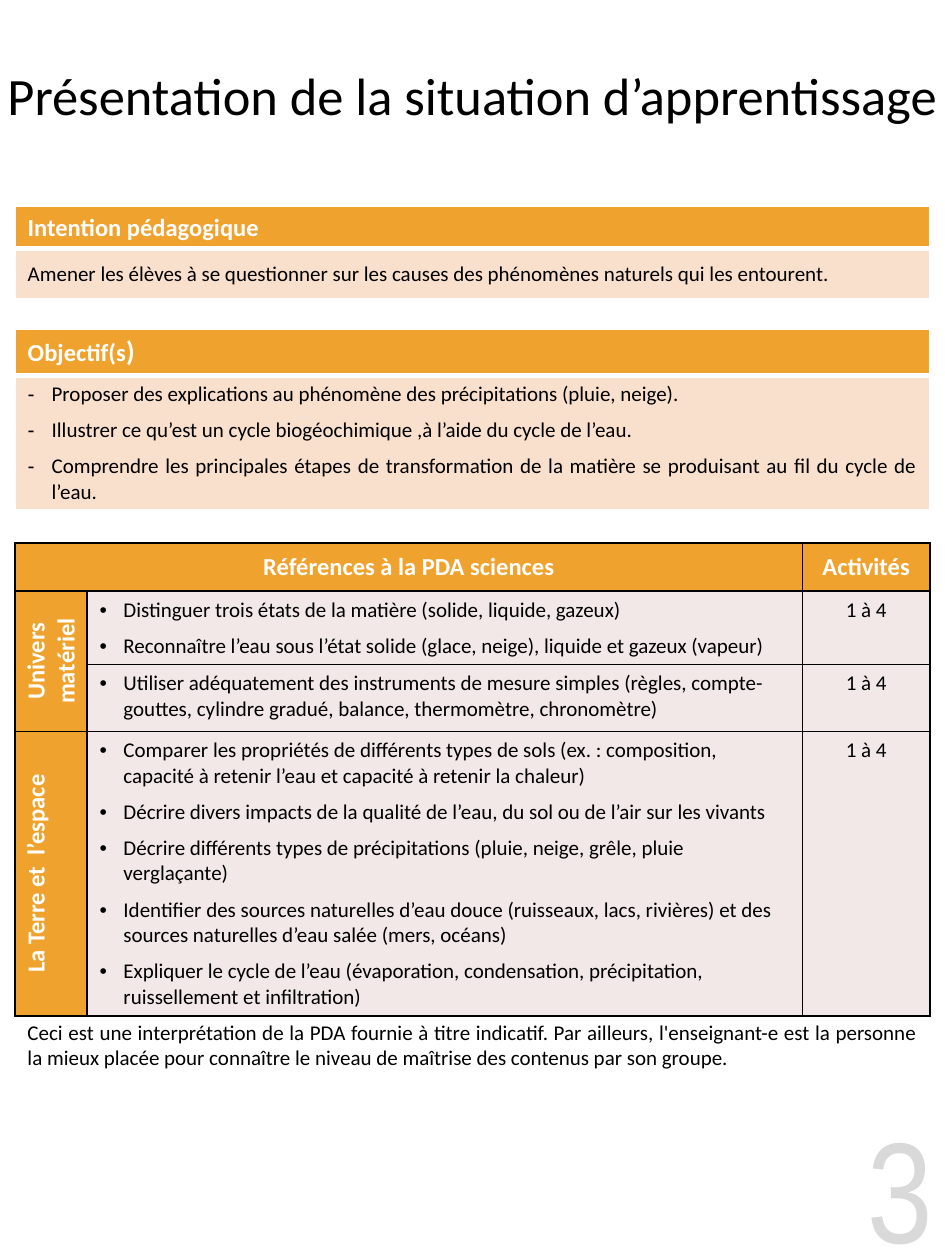
"""Build the page that presents the learning situation."""
from dataclasses import dataclass

from lxml import etree
from pptx import Presentation
from pptx import util as u
from pptx.dml.color import RGBColor
from pptx.enum import text
from pptx.oxml.ns import qn

PX = 9144
ALIGN = text.PP_ALIGN
MIDDLE = text.MSO_ANCHOR.MIDDLE


@dataclass(frozen=True)
class Theme:
    font: str = "Calibri"
    number_font: str = "Arial Narrow"
    black: str = "000000"
    white: str = "FFFFFF"
    gray: str = "D9D9D9"
    orange: str = "F0A22E"
    peach: str = "F9E0CD"
    rose: str = "F1E8E7"
    body: int = 12
    heading: int = 14
    bracket: int = 16
    title: int = 30
    number: int = 82


class PageBuilder:
    def __init__(self, page, theme):
        self.page = page
        self.theme = theme

    def add_lines(self, frame, lines, size, color, bold=False, align=None,
                  bullet=None, name=None):
        for index, line in enumerate(lines):
            para = frame.paragraphs[0] if index == 0 else frame.add_paragraph()
            if align is not None:
                para.alignment = align
            if bullet:
                props = para._p.get_or_add_pPr()
                props.set("marL", str(19 * PX))
                props.set("indent", str(-19 * PX))
                etree.SubElement(props, qn("a:buFont"), typeface="Arial")
                etree.SubElement(props, qn("a:buChar"), char=bullet)
                if index:
                    para.space_before = u.Pt(6)
            para.font.name = name or self.theme.font
            para.font.size = u.Pt(size)
            para.font.bold = bold
            para.font.color.rgb = RGBColor.from_string(color)
            para.add_run().text = line

    def label(self, left, top, width, height, line, size, color, align,
              anchor=MIDDLE, name=None):
        box = self.page.shapes.add_textbox(
            *(n * PX for n in (left, top, width, height)))
        frame = box.text_frame
        frame.word_wrap = True
        frame.vertical_anchor = anchor
        self.add_lines(frame, [line], size, color, align=align, name=name)
        return frame

    def table(self, left, top, columns, rows):
        frame = self.page.shapes.add_table(
            len(rows), len(columns), left * PX, top * PX,
            sum(columns) * PX, sum(rows) * PX)
        table = frame.table
        table.first_row = table.horz_banding = False
        for column, width in zip(table.columns, columns):
            column.width = width * PX
        for row, height in zip(table.rows, rows):
            row.height = height * PX
        return table

    def borders(self, cell, color, **widths):
        props = cell._tc.get_or_add_tcPr()
        for index, side in enumerate("LRTB"):
            line = etree.Element(qn(f"a:ln{side}"),
                                 w=str(u.Pt(widths.get(side, 1))))
            fill = etree.SubElement(line, qn("a:solidFill"))
            etree.SubElement(fill, qn("a:srgbClr"), val=color)
            props.insert(index, line)

    def paint(self, cell, color):
        cell.fill.solid()
        cell.fill.fore_color.rgb = RGBColor.from_string(color)

    def heading(self, cell, lines, align=ALIGN.CENTER, vertical=False):
        self.paint(cell, self.theme.orange)
        cell.vertical_anchor = MIDDLE
        if vertical:
            cell._tc.get_or_add_tcPr().set("vert", "vert270")
        self.add_lines(cell.text_frame, lines, self.theme.heading,
                       self.theme.white, True, align)

    def content(self, cell, lines, color, align=None, bullet=None):
        self.paint(cell, color)
        self.add_lines(cell.text_frame, lines, self.theme.body,
                       self.theme.black, align=align, bullet=bullet)

    def panel(self, top, rows, heading, lines, align=None, bullet=None):
        table = self.table(12, top, [726], rows)
        header, body = table.cell(0, 0), table.cell(1, 0)
        self.heading(header, [heading], ALIGN.LEFT)
        self.content(body, lines, self.theme.peach, align, bullet)
        self.borders(header, self.theme.white, B=3)
        self.borders(body, self.theme.white, T=3)
        return header, body

    def references(self, top, rows, topics, sections):
        table = self.table(12, top, [57, 568, 101], rows)
        table.cell(0, 0).merge(table.cell(0, 1))
        self.heading(table.cell(0, 0), ["Références à la PDA sciences"])
        self.heading(table.cell(0, 2), ["Activités"])
        for row, topic in enumerate(topics, 1):
            self.content(table.cell(row, 1), topic, self.theme.rose, bullet="•")
            self.content(table.cell(row, 2), ["1 à 4"], self.theme.rose,
                         ALIGN.CENTER)
        for first, last, lines in sections:
            if last > first:
                table.cell(first, 0).merge(table.cell(last, 0))
            self.heading(table.cell(first, 0), lines, vertical=True)
        for cell in table.iter_cells():
            self.borders(cell, self.theme.black)


OBJECTIVES = [
    "Proposer des explications au phénomène des précipitations (pluie, neige).",
    "Illustrer ce qu’est un cycle biogéochimique ,à l’aide du cycle de l’eau.",
    "Comprendre les principales étapes de transformation de la matière se "
    "produisant au fil du cycle de l’eau.",
]
TOPICS = [
    ["Distinguer trois états de la matière (solide, liquide, gazeux)",
     "Reconnaître l’eau sous l’état solide (glace, neige), liquide et gazeux "
     "(vapeur)"],
    ["Utiliser adéquatement des instruments de mesure simples (règles, "
     "compte-gouttes, cylindre gradué, balance, thermomètre, chronomètre)"],
    ["Comparer les propriétés de différents types de sols (ex. : composition, "
     "capacité à retenir l’eau et capacité à retenir la chaleur)",
     "Décrire divers impacts de la qualité de l’eau, du sol ou de l’air sur "
     "les vivants",
     "Décrire différents types de précipitations (pluie, neige, grêle, pluie "
     "verglaçante)",
     "Identifier des sources naturelles d’eau douce (ruisseaux, lacs, "
     "rivières) et des sources naturelles d’eau salée (mers, océans)",
     "Expliquer le cycle de l’eau (évaporation, condensation, précipitation, "
     "ruissellement et infiltration)"],
]
SECTIONS = [(1, 2, ["Univers", "matériel"]), (3, 3, ["La Terre et  l’espace"])]


def main():
    deck = Presentation()
    deck.slide_width, deck.slide_height = 750 * PX, 1000 * PX
    theme = Theme()
    builder = PageBuilder(deck.slides.add_slide(deck.slide_layouts[6]), theme)

    builder.label(628, 879, 122, 124, "3", theme.number, theme.gray,
                  ALIGN.RIGHT, name=theme.number_font)
    builder.label(-22, 40, 794, 70,
                  "Présentation de la situation d’apprentissage",
                  theme.title, theme.black, ALIGN.CENTER)

    _, intention = builder.panel(
        164, [33, 40], "Intention pédagogique",
        ["Amener les élèves à se questionner sur les causes des phénomènes "
         "naturels qui les entourent."])
    intention.vertical_anchor = MIDDLE

    objective, _ = builder.panel(261, [37, 106], "Objectif(s", OBJECTIVES,
                                 ALIGN.JUSTIFY, "-")
    span = objective.text_frame.paragraphs[0].add_run()
    span.text = ")"
    span.font.size = u.Pt(theme.bracket)

    builder.references(431, [38, 58, 53, 226], TOPICS, SECTIONS)
    note = builder.label(
        12, 804, 726, 50,
        "Ceci est une interprétation de la PDA fournie à titre indicatif. Par "
        "ailleurs, l'enseignant-e est la personne la mieux placée pour "
        "connaître le niveau de maîtrise des contenus par son groupe.",
        theme.body, theme.black, ALIGN.JUSTIFY, text.MSO_ANCHOR.TOP)
    note.auto_size = text.MSO_AUTO_SIZE.SHAPE_TO_FIT_TEXT

    deck.save("out.pptx")


if __name__ == "__main__":
    main()
